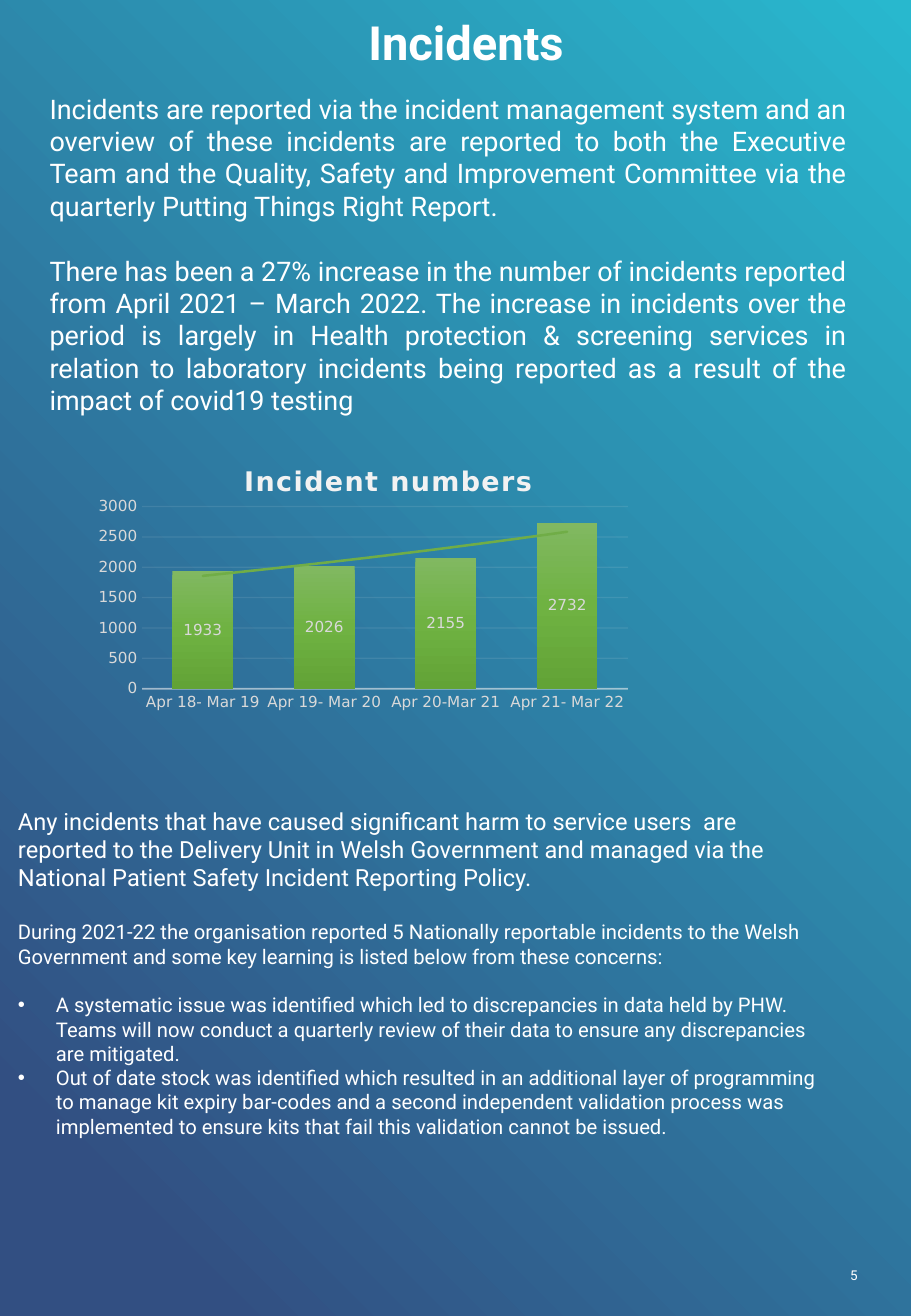
from copy import deepcopy
from dataclasses import dataclass

from lxml import etree
from pptx import Presentation
from pptx.chart.data import CategoryChartData
from pptx.dml.color import RGBColor
from pptx.enum.chart import XL_CHART_TYPE, XL_LABEL_POSITION, XL_TICK_MARK
from pptx.enum.text import MSO_ANCHOR, PP_ALIGN
from pptx.oxml import parse_xml
from pptx.oxml.ns import nsdecls, qn
from pptx.util import Pt

COLUMNS = XL_CHART_TYPE.COLUMN_CLUSTERED
LABEL_CENTER = XL_LABEL_POSITION.CENTER
NO_TICK = XL_TICK_MARK.NONE
TOP, MIDDLE = MSO_ANCHOR.TOP, MSO_ANCHOR.MIDDLE
LEFT, CENTER, JUSTIFY = PP_ALIGN.LEFT, PP_ALIGN.CENTER, PP_ALIGN.JUSTIFY

TEXT_FONT, CHART_FONT = "Roboto", "DejaVu Sans"
COLORS = {
    "navy": "324F82", "cyan": "28B8CE", "white": "FFFFFF",
    "pale": "F2F2F2", "grey": "D9D9D9", "trend": "70AD47",
    "bar_top": "81B861", "bar_middle": "6FB242", "bar_base": "62A336",
}
INDENT = 22.5


@dataclass
class Para:
    text: str
    size: float
    align: PP_ALIGN = LEFT
    before: float = 0
    bullet: bool = False
    bold: bool = False


@dataclass
class TextBox:
    left: float
    top: float
    width: float
    height: float
    paras: list[Para]
    anchor: MSO_ANCHOR = TOP
    inset: bool = True


BOXES = [
    TextBox(44, 4, 464.5, 42, [Para("Incidents", 27.9, CENTER, bold=True)], MIDDLE, False),
    TextBox(22.3, 51.1, 486.7, 200.9, [
        Para("Incidents are reported via the incident management system and an overview of these "
             "incidents are reported to both the Executive Team and the Quality, Safety and "
             "Improvement Committee via the quarterly Putting Things Right Report.", 16, JUSTIFY),
        Para("There has been a 27% increase in the number of incidents reported from April 2021 – "
             "March 2022. The increase in incidents over the period is largely in Health protection "
             "& screening services in relation to laboratory incidents being reported as a result "
             "of the impact of covid19 testing", 16, JUSTIFY, before=19.2),
    ]),
    TextBox(3.6, 474.5, 492.5, 317.5, [
        Para("Any incidents that have caused significant harm to service users  are reported to the "
             "Delivery Unit in Welsh Government and managed via the National Patient Safety "
             "Incident Reporting Policy.", 14),
        Para("During 2021-22 the organisation reported 5 Nationally reportable incidents to the "
             "Welsh Government and some key learning is listed below from these concerns:",
             12, before=16.6),
        Para("A systematic issue was identified which led to discrepancies in data held by PHW.  "
             "Teams will now conduct a quarterly review of their data to ensure any discrepancies "
             "are mitigated.", 12, before=14.4, bullet=True),
        Para("Out of date stock was identified which resulted in an additional layer of programming "
             "to manage kit expiry bar-codes and a second independent validation process was "
             "implemented to ensure kits that fail this validation cannot be issued.",
             12, bullet=True),
    ]),
    TextBox(496.8, 747.4, 24.5, 17.3, [Para("5", 8)]),
]
INCIDENTS = {
    "Apr 18- Mar 19": 1933, "Apr 19- Mar 20": 2026,
    "Apr 20-Mar 21": 2155, "Apr 21- Mar 22": 2732,
}


def rgb(name: str) -> RGBColor:
    return RGBColor.from_string(COLORS[name])


def style_font(font, name: str, size: float, color: str, bold: bool = False) -> None:
    font.name, font.size, font.bold = name, Pt(size), bold
    font.color.rgb = rgb(color)


def paint_gradient(fill, owner, stops: list[tuple[float, str]], angle: float) -> None:
    fill.gradient()
    fill.gradient_angle = angle
    stop_list = next(owner.iter(qn("a:gsLst")))
    while len(stop_list) < len(stops):
        stop_list.append(deepcopy(stop_list[0]))
    for stop, (position, color) in zip(fill.gradient_stops, stops):
        stop.position = position
        stop.color.rgb = rgb(color)


def add_bullet(para) -> None:
    properties = para._p.get_or_add_pPr()
    properties.set("marL", str(Pt(INDENT)))
    properties.set("indent", str(-Pt(INDENT)))
    etree.SubElement(properties, qn("a:buFont")).set("typeface", "Arial")
    etree.SubElement(properties, qn("a:buChar")).set("char", "•")


def add_text(page, item: TextBox) -> None:
    box = page.shapes.add_textbox(Pt(item.left), Pt(item.top), Pt(item.width), Pt(item.height))
    frame = box.text_frame
    frame.word_wrap = True
    frame.vertical_anchor = item.anchor
    if not item.inset:
        frame.margin_left = frame.margin_right = frame.margin_top = frame.margin_bottom = 0
    for index, content in enumerate(item.paras):
        para = frame.add_paragraph() if index else frame.paragraphs[0]
        para.text = content.text
        if content.bullet:
            add_bullet(para)
        para.alignment = content.align
        if content.before:
            para.space_before = Pt(content.before)
        for span in para.runs:
            style_font(span.font, TEXT_FONT, content.size, "white", content.bold)


def make_layout(**parts: float):
    target = '<c:layoutTarget val="inner"/>' if "w" in parts else ""
    modes = "".join(f'<c:{key}Mode val="edge"/>' for key in parts)
    values = "".join(f'<c:{key} val="{value}"/>' for key, value in parts.items())
    return parse_xml(f'<c:layout {nsdecls("c")}><c:manualLayout>{target}{modes}{values}'
                     "</c:manualLayout></c:layout>")


def replace_layout(owner, index: int, layout) -> None:
    for old in owner.findall(qn("c:layout")):
        owner.remove(old)
    owner.insert(index, layout)


def style_line(line, owner, width: float, opacity: int) -> None:
    line.width = Pt(width)
    line.color.rgb = rgb("pale")
    color = next(owner.iter(qn("a:srgbClr")))
    etree.SubElement(color, qn("a:alpha")).set("val", str(opacity * 1000))


def style_axes(chart) -> None:
    category, value = chart.category_axis, chart.value_axis
    category.has_major_gridlines = False
    style_line(category.format.line, category._element.find(qn("c:spPr")), 1, 54)
    value.minimum_scale, value.maximum_scale, value.major_unit = 0, 3000, 500
    value.has_major_gridlines = True
    grid_line = value.major_gridlines.format.line
    style_line(grid_line, value._element.find(qn("c:majorGridlines")), 0.75, 10)
    value.format.line.fill.background()
    for axis in (category, value):
        axis.major_tick_mark = axis.minor_tick_mark = NO_TICK
        style_font(axis.tick_labels.font, CHART_FONT, 9, "grey")


def add_incident_chart(page) -> None:
    data = CategoryChartData()
    data.categories = list(INCIDENTS)
    data.add_series("Series 1", list(INCIDENTS.values()))
    chart = page.shapes.add_chart(COLUMNS, Pt(51.8), Pt(254.9), Pt(360), Pt(216), data).chart
    chart.has_legend = False
    chart.font.name, chart.font.size = CHART_FONT, Pt(10)
    chart.has_title = True
    title = chart.chart_title
    title.include_in_layout = False
    title.text_frame.text = "Incident numbers"
    for span in title.text_frame.paragraphs[0].runs:
        style_font(span.font, CHART_FONT, 16, "pale", True)
        span.font._element.set("spc", "100")
    replace_layout(title._element, 1, make_layout(x=0.25, y=0.08))
    plot_area = chart._chartSpace.chart.plotArea
    replace_layout(plot_area, 0, make_layout(x=0.09, y=0.21, w=0.89, h=0.71))
    style_axes(chart)

    plot = chart.plots[0]
    plot.gap_width, plot.overlap, plot.vary_by_categories = 100, -24, False
    series = plot.series[0]
    paint_gradient(series.format.fill, series._element,
                   [(0, "bar_top"), (0.5, "bar_middle"), (1, "bar_base")], 270)
    labels = series.data_labels
    labels.show_value = True
    labels.position = LABEL_CENTER
    style_font(labels.font, CHART_FONT, 9, "grey")
    series._element.find(qn("c:cat")).addprevious(parse_xml(
        f'<c:trendline {nsdecls("c", "a")}><c:spPr><a:ln w="{Pt(1.5)}" cap="rnd"><a:solidFill>'
        f'<a:srgbClr val="{COLORS["trend"]}"/></a:solidFill></a:ln></c:spPr>'
        '<c:trendlineType val="exp"/><c:dispRSqr val="0"/><c:dispEq val="0"/></c:trendline>'))


def main() -> None:
    deck = Presentation()
    deck.slide_width, deck.slide_height = Pt(540), Pt(780)
    page = deck.slides.add_slide(deck.slide_layouts[6])
    paint_gradient(page.background.fill, page.element, [(0.1, "navy"), (1, "cyan")], 45)
    add_incident_chart(page)
    for item in BOXES:
        add_text(page, item)
    deck.save("out.pptx")


if __name__ == "__main__":
    main()
